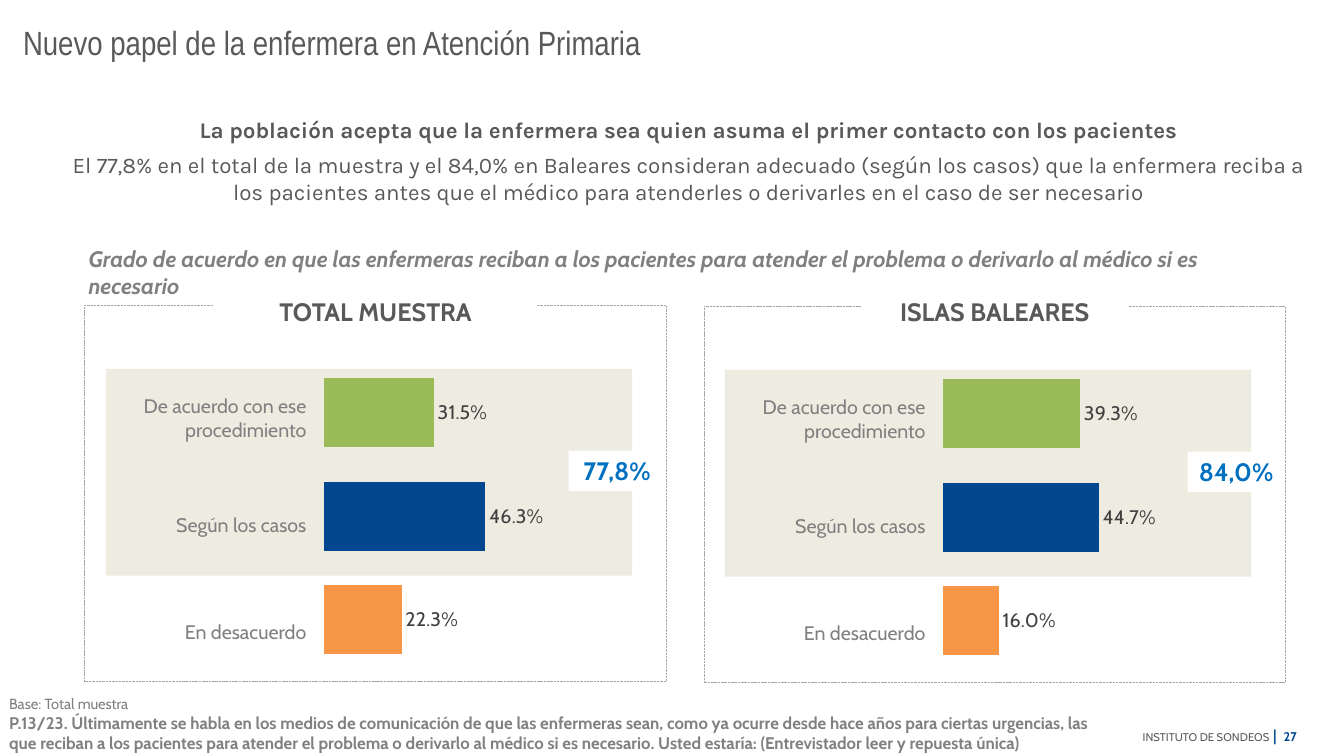
"""Build the slide on the new role of nurses in primary care."""
from lxml.etree import SubElement
from pptx import Presentation
from pptx.chart.data import CategoryChartData
from pptx.dml.color import RGBColor
from pptx.enum.chart import XL_CHART_TYPE as ChartType, XL_LABEL_POSITION as LabelPosition
from pptx.enum.dml import MSO_LINE as Dash
from pptx.enum.shapes import MSO_SHAPE as Shape
from pptx.enum.text import MSO_ANCHOR as Anchor, PP_ALIGN as Align
from pptx.oxml.ns import qn
from pptx.util import Pt

PX = 9144
WHITE = RGBColor(0xFF, 0xFF, 0xFF)
DARK = RGBColor(0x59, 0x59, 0x59)
GREY = RGBColor(0x80, 0x80, 0x80)
LABEL = RGBColor(0x40, 0x40, 0x40)
BORDER = RGBColor(0xA6, 0xA6, 0xA6)
BEIGE = RGBColor(0xEE, 0xEC, 0xE1)
GREEN = RGBColor(0x9B, 0xBB, 0x59)
NAVY = RGBColor(0x00, 0x47, 0x8F)
ORANGE = RGBColor(0xF7, 0x96, 0x46)
BLUE = RGBColor(0x00, 0x70, 0xC0)
PLAIN_TABLE = "{2D5ABB26-0587-4C30-8999-92F81FD0307C}"

TITLE = "Nuevo papel de la enfermera en Atención Primaria"
MESSAGE = "La población acepta que la enfermera sea quien asuma el primer contacto con los pacientes"
DETAIL = ("El 77,8% en el total de la muestra y el 84,0% en Baleares consideran adecuado "
          "(según los casos) que la enfermera reciba a los pacientes antes que el médico "
          "para atenderles o derivarles en el caso de ser necesario")
QUESTION = ("Grado de acuerdo en que las enfermeras reciban a los pacientes para atender "
            "el problema o derivarlo al médico si es necesario")
BASE = "Base: Total muestra"
WORDING = ("P.13/23. Últimamente se habla en los medios de comunicación de que las enfermeras "
           "sean, como ya ocurre desde hace años para ciertas urgencias, las que reciban a los "
           "pacientes para atender el problema o derivarlo al médico si es necesario. "
           "Usted estaría: (Entrevistador leer y repuesta única)")
FOOTER = [("INSTITUTO DE SONDEOS", 8, DARK, False), (" ", 11, DARK, False),
          ("|  ", 11, NAVY, True), ("27", 9, NAVY, True)]
ANSWERS = ["De acuerdo con ese procedimiento", "Según los casos", "En desacuerdo"]
BAR_COLOURS = [GREEN, NAVY, ORANGE]
PANELS = [
    {"name": "TOTAL MUESTRA", "name_box": (212, 282, 321, 53), "values": (31.5, 46.3, 22.3),
     "sum": "77,8%", "shift": (0, 0)},
    {"name": "ISLAS BALEARES", "name_box": (854, 282, 265, 53), "values": (39.3, 44.7, 16),
     "sum": "84,0%", "shift": (614, 1)},
]


def scaled(area, shift=(0, 0)):
    left, top, width, height = area
    return [length * PX for length in (left + shift[0], top + shift[1], width, height)]


def style(font, size, colour, name="Cabin", bold=False, italic=False):
    font.size, font.name, font.bold, font.italic = Pt(size), name, bold, italic
    font.color.rgb = colour


def write(box, lines, align=Align.LEFT, anchor=Anchor.TOP, after=0):
    frame = box.text_frame
    frame.word_wrap, frame.vertical_anchor = True, anchor
    for number, (text, look) in enumerate(lines):
        para = frame.add_paragraph() if number else frame.paragraphs[0]
        para.text, para.alignment, para.space_after = text, align, Pt(after)
        style(para.font, **look)


def add_text(page, area, lines, **layout):
    box = page.shapes.add_textbox(*scaled(area))
    write(box, lines, **layout)
    return box


def add_box(page, area, fill=None, shift=(0, 0)):
    box = page.shapes.add_shape(Shape.RECTANGLE, *scaled(area, shift))
    box.shadow.inherit = False
    if fill is None:
        box.fill.background()
    else:
        box.fill.solid()
        box.fill.fore_color.rgb = fill
    box.line.fill.background()
    return box


def add_answers(page, shift):
    holder = page.shapes.add_table(len(ANSWERS), 1, *scaled((37, 362, 268, 318), shift))
    for style_id in holder.element.iter(qn("a:tableStyleId")):
        style_id.text = PLAIN_TABLE
    table = holder.table
    table.first_row = table.horz_banding = False
    for row, answer in enumerate(ANSWERS):
        cell = table.cell(row, 0)
        cell.fill.background()
        cell.vertical_anchor = Anchor.MIDDLE
        cell.margin_left = cell.margin_right = cell.margin_top = PX
        cell.margin_bottom = 0
        para = cell.text_frame.paragraphs[0]
        para.text, para.alignment = answer, Align.RIGHT
        style(para.font, 14, GREY)


def add_bars(page, values, shift):
    data = CategoryChartData()
    data.categories = ["1", "2", "3"]
    data.add_series("Series 1", values)
    chart = page.shapes.add_chart(
        ChartType.BAR_CLUSTERED, *scaled((321, 358, 361, 318), shift), data).chart
    chart.has_legend = chart.has_title = False
    style(chart.font, 11, LABEL, "Calibri")
    chart.category_axis.reverse_order = True
    chart.value_axis.minimum_scale, chart.value_axis.maximum_scale = 0, 100
    chart.value_axis.has_major_gridlines = False
    chart.category_axis.visible = chart.value_axis.visible = False

    plot = chart.plots[0]
    plot.gap_width, plot.vary_by_categories = 50, False
    series = plot.series[0]
    for number, colour in enumerate(BAR_COLOURS):
        fill = series.points[number].format.fill
        fill.solid()
        fill.fore_color.rgb = colour
    labels = series.data_labels
    labels.show_value, labels.position = True, LabelPosition.OUTSIDE_END
    labels.number_format, labels.number_format_is_linked = "0.0\\%", False
    style(labels.font, 14, LABEL)

    area = next(chart.element.iter(qn("c:plotArea")))
    for old in area.findall(qn("c:layout")):
        area.remove(old)
    layout = area.makeelement(qn("c:layout"))
    area.insert(0, layout)
    manual = SubElement(layout, qn("c:manualLayout"))
    for tag, value in (("layoutTarget", "inner"), ("xMode", "edge"), ("yMode", "edge"),
                       ("x", "0"), ("y", "0"), ("w", "0.96"), ("h", "0.97")):
        SubElement(manual, qn("c:" + tag)).set("val", value)


def add_panel(page, panel):
    shift = panel["shift"]
    add_box(page, (105, 366, 522, 205), BEIGE, shift)
    add_answers(page, shift)
    add_bars(page, panel["values"], shift)
    border = add_box(page, (84, 303, 577, 373), shift=shift).line
    border.color.rgb, border.width = BORDER, Pt(0.25)
    border.dash_style = Dash.SQUARE_DOT
    write(add_box(page, (564, 447, 96, 40), WHITE, shift),
          [(panel["sum"], dict(size=18, colour=BLUE, bold=True))], align=Align.CENTER)
    write(add_box(page, panel["name_box"], WHITE),
          [(panel["name"], dict(size=18, colour=DARK, bold=True))],
          align=Align.CENTER, anchor=Anchor.MIDDLE, after=6)


def add_footer(page):
    frame = page.shapes.add_textbox(*scaled((1105, 715, 191, 29))).text_frame
    frame.word_wrap, frame.vertical_anchor = False, Anchor.MIDDLE
    para = frame.paragraphs[0]
    para.alignment = Align.RIGHT
    for text, size, colour, bold in FOOTER:
        span = para.add_run()
        span.text = text
        style(span.font, size, colour, bold=bold)


def main():
    deck = Presentation()
    deck.slide_width, deck.slide_height = 1333 * PX, 750 * PX
    page = deck.slides.add_slide(deck.slide_layouts[6])
    add_footer(page)
    add_text(page, (13, 17, 1142, 50),
             [(TITLE, dict(size=24, colour=DARK, name="Arial Narrow"))])
    base = add_text(page, (0, 684, 1100, 67),
                    [(BASE, dict(size=10.5, colour=GREY)),
                     (WORDING, dict(size=12, colour=GREY, bold=True))], anchor=Anchor.BOTTOM)
    frame = base.text_frame
    frame.margin_left = frame.margin_right = 9 * PX
    frame.margin_top = frame.margin_bottom = 4 * PX
    write(add_box(page, (78, 238, 1210, 37), WHITE),
          [(QUESTION, dict(size=16, colour=GREY, bold=True, italic=True))], after=6)
    for panel in PANELS:
        add_panel(page, panel)
    add_text(page, (59, 99, 1248, 120),
             [(MESSAGE, dict(size=16, colour=DARK, name="Karla", bold=True)),
              (DETAIL, dict(size=16, colour=DARK, name="Karla"))],
             align=Align.CENTER, anchor=Anchor.MIDDLE, after=6)
    deck.save("out.pptx")


if __name__ == "__main__":
    main()
